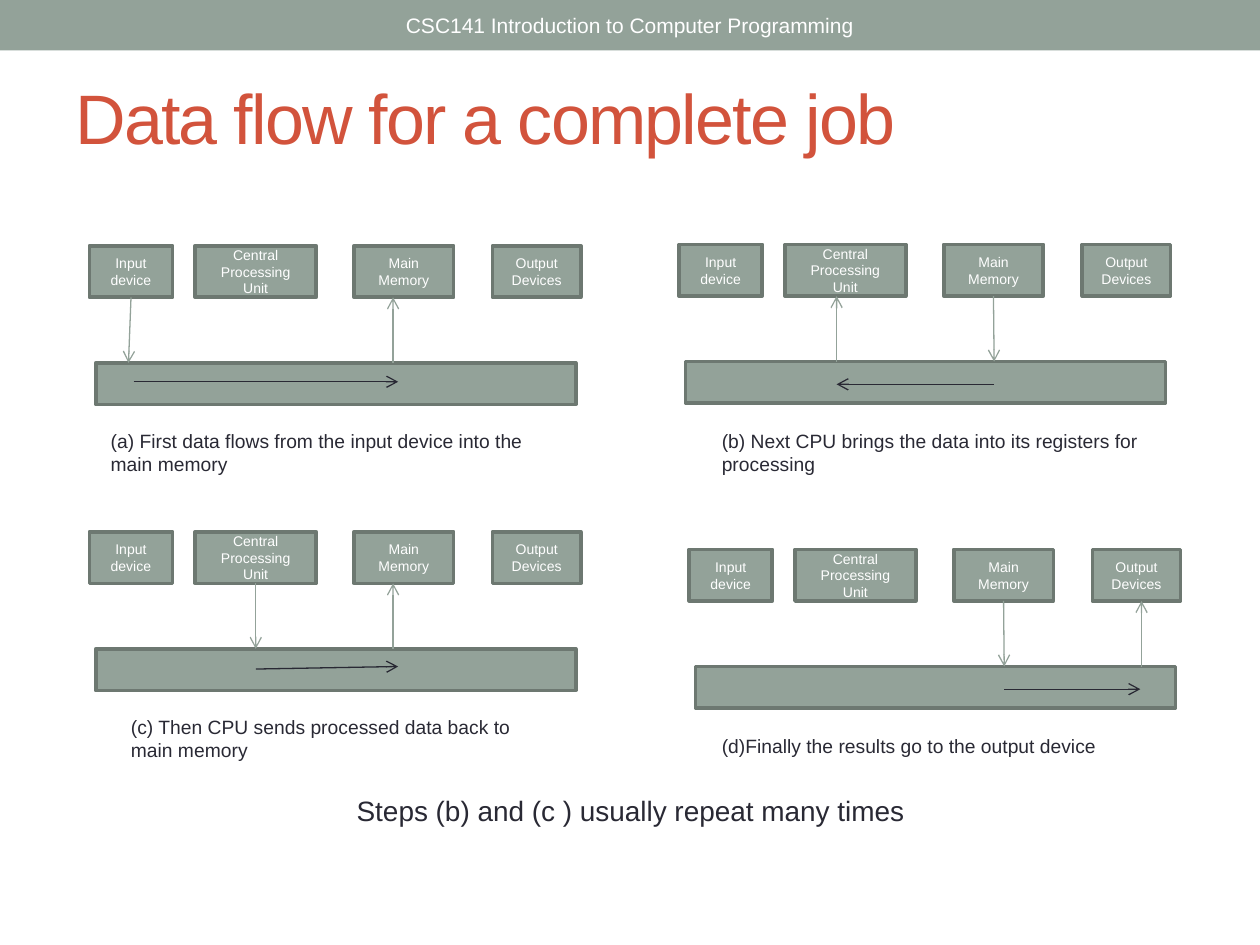
from dataclasses import dataclass

from lxml import etree
from pptx import Presentation
from pptx.dml.color import RGBColor
from pptx.enum.shapes import MSO_CONNECTOR, MSO_SHAPE
from pptx.enum.text import MSO_ANCHOR, MSO_AUTO_SIZE, PP_ALIGN
from pptx.oxml.ns import qn
from pptx.util import Inches, Pt


@dataclass(frozen=True)
class Theme:
    font: str = "Arial"
    sage: RGBColor = RGBColor(0x93, 0xA2, 0x99)
    border: RGBColor = RGBColor(0x6D, 0x78, 0x71)
    red: RGBColor = RGBColor(0xD2, 0x53, 0x3C)
    ink: RGBColor = RGBColor(0x29, 0x29, 0x34)
    white: RGBColor = RGBColor(0xFF, 0xFF, 0xFF)
    title: int = 40
    note: int = 16
    header: int = 12
    caption: int = 11
    device: int = 8


T = Theme()


def write(sp, text, size, color, align=PP_ALIGN.LEFT, anchor=MSO_ANCHOR.MIDDLE):
    """Put one wrapped paragraph into a shape and return its run."""
    tf = sp.text_frame
    tf.text = text
    tf.word_wrap = True
    tf.vertical_anchor = anchor
    p = tf.paragraphs[0]
    p.alignment = align
    r = p.runs[0]
    r.font.name, r.font.size, r.font.color.rgb = T.font, Pt(size), color
    return r


def add_arrow(shapes, x1, y1, x2, y2, color):
    line = shapes.add_connector(MSO_CONNECTOR.STRAIGHT, Inches(x1), Inches(y1), Inches(x2), Inches(y2))
    line.line.color.rgb = color
    line.line.width = Pt(0.75)
    etree.SubElement(line.line._get_or_add_ln(), qn("a:tailEnd"), type="arrow")
    etree.SubElement(line._element.spPr, qn("a:effectLst"))
    return line


prs = Presentation()
prs.slide_width, prs.slide_height = Inches(10), Inches(7.5)
s = prs.slides.add_slide(prs.slide_layouts[6])

# Header band and title
band = s.shapes.add_shape(MSO_SHAPE.RECTANGLE, 0, 0, Inches(10), Inches(0.4))
band.shadow.inherit = False
band.fill.solid()
band.fill.fore_color.rgb = T.sage
band.line.fill.background()
header = s.shapes.add_textbox(Inches(2.75), Inches(0.02), Inches(4.5), Inches(0.36))
write(header, "CSC141 Introduction to Computer Programming", T.header, T.white, PP_ALIGN.CENTER)
title = s.shapes.add_textbox(Inches(0.5), Inches(0.3), Inches(9), Inches(1.25))
r = write(title, "Data flow for a complete job", T.title, T.red)
r.font._element.set("spc", "-100")

# Device boxes and bus, relative to the panel's corner: left, top, width, height, text
BOXES = [
    (0, 0, 0.66, 0.41, "Input device"),
    (0.84, 0, 0.96, 0.41, "Central Processing Unit"),
    (2.1, 0, 0.79, 0.41, "Main Memory"),
    (3.2, 0, 0.7, 0.41, "Output Devices"),
    (0.05, 0.93, 3.81, 0.33, ""),
]
DEVICE_BOTTOM, BUS_TOP = 0.41, 0.93
INPUT, CPU, MEMORY = range(3)

# Corner, sending device, x where data enters and leaves the bus,
# flow arrow on the bus, caption place and text
PANELS = [
    (0.71, 1.95, INPUT, 0.31, 2.41, (0.35, 1.08, 2.45, 1.08), (0.78, 3.36, 0.47),
     "(a) First data flows from the input device into the main memory"),
    (5.39, 1.94, MEMORY, 2.5, 1.25, (2.5, 1.11, 1.25, 1.11), (5.63, 3.36, 0.47),
     "(b) Next CPU brings the data into its registers for processing"),
    (0.71, 4.22, CPU, 1.32, 2.41, (1.32, 1.09, 2.45, 1.07), (0.94, 5.63, 0.47),
     "(c) Then CPU sends processed data back to main memory"),
    (5.47, 4.36, MEMORY, 2.5, 3.59, (2.5, 1.11, 3.58, 1.11), (5.63, 5.78, 0.29),
     "(d)Finally the results go to the output device"),
]

for x, y, sender, enter, leave, flow, (cap_x, cap_y, cap_h), caption in PANELS:
    shapes = s.shapes.add_group_shape().shapes
    boxes = []
    for left, top, width, height, label in BOXES:
        sp = shapes.add_shape(MSO_SHAPE.RECTANGLE, Inches(x + left), Inches(y + top),
                              Inches(width), Inches(height))
        sp.shadow.inherit = False
        sp.fill.solid()
        sp.fill.fore_color.rgb = T.sage
        sp.line.color.rgb = T.border
        sp.line.width = Pt(2.08)
        if label:
            write(sp, label, T.device, T.white, PP_ALIGN.CENTER)
        boxes.append(sp)

    sent = add_arrow(shapes, x + enter, y + DEVICE_BOTTOM, x + enter, y + BUS_TOP, T.sage)
    sent.begin_connect(boxes[sender], 2)
    add_arrow(shapes, x + leave, y + BUS_TOP, x + leave, y + DEVICE_BOTTOM, T.sage)
    x1, y1, x2, y2 = flow
    add_arrow(shapes, x + x1, y + y1, x + x2, y + y2, T.ink)

    tb = shapes.add_textbox(Inches(cap_x), Inches(cap_y), Inches(3.52), Inches(cap_h))
    write(tb, caption, T.caption, T.ink, anchor=MSO_ANCHOR.TOP)
    tb.text_frame.auto_size = MSO_AUTO_SIZE.SHAPE_TO_FIT_TEXT

note = s.shapes.add_textbox(Inches(1.8), Inches(6.25), Inches(6.41), Inches(0.37))
write(note, "Steps (b) and (c ) usually repeat many times", T.note, T.ink, PP_ALIGN.CENTER, MSO_ANCHOR.TOP)
note.text_frame.auto_size = MSO_AUTO_SIZE.SHAPE_TO_FIT_TEXT

prs.save("out.pptx")
